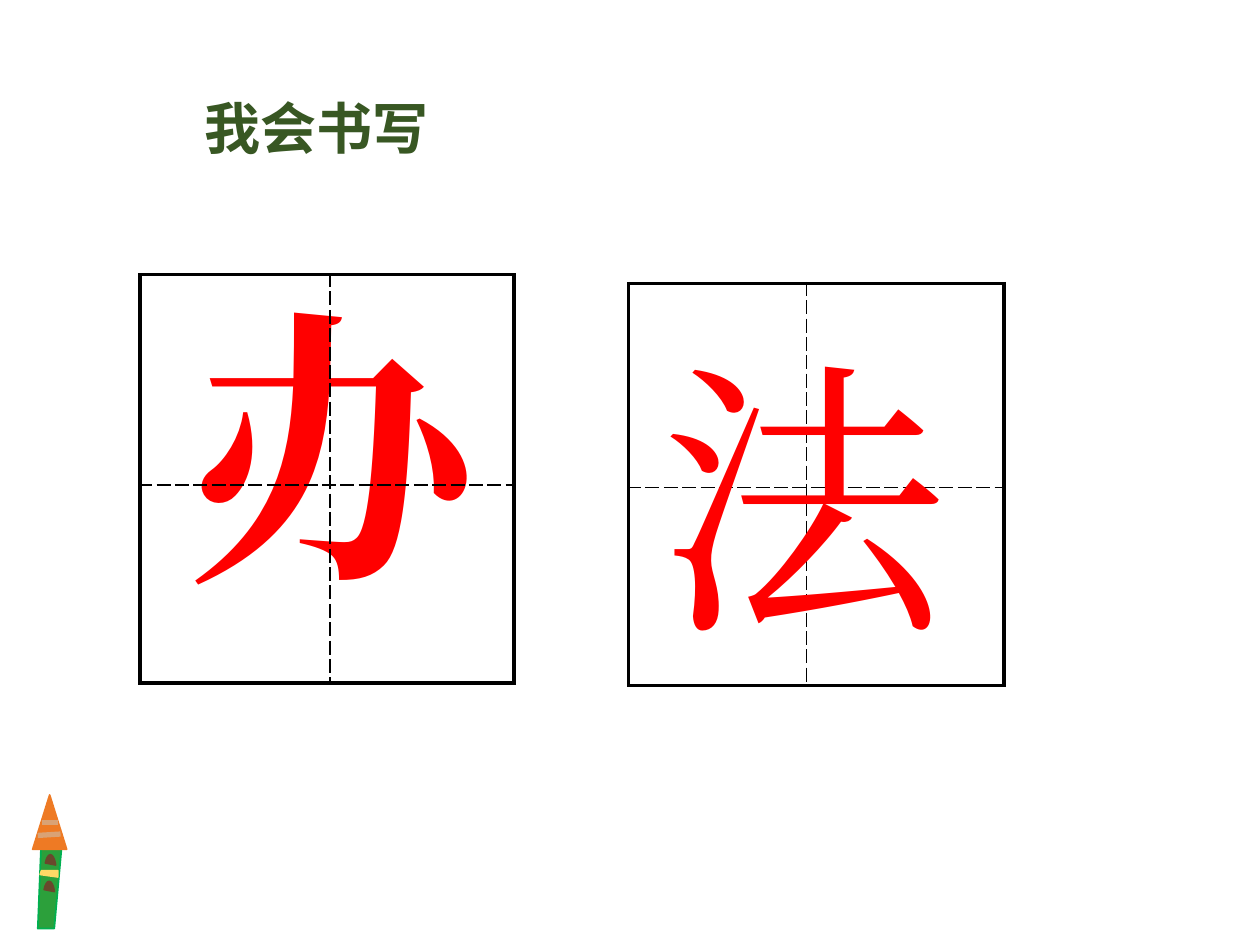
from dataclasses import dataclass

from lxml import etree
from pptx import Presentation
from pptx.dml.color import RGBColor
from pptx.enum.shapes import MSO_CONNECTOR, MSO_SHAPE
from pptx.enum.text import MSO_ANCHOR, MSO_AUTO_SIZE, PP_ALIGN
from pptx.oxml.ns import qn
from pptx.util import Pt

TRIANGLE, CHORD = MSO_SHAPE.ISOSCELES_TRIANGLE, MSO_SHAPE.CHORD
STRAIGHT = MSO_CONNECTOR.STRAIGHT
TOP, LEFT = MSO_ANCHOR.TOP, PP_ALIGN.LEFT
FIT_SHAPE = MSO_AUTO_SIZE.SHAPE_TO_FIT_TEXT
TITLE_ONLY = 5

COLORS = {
    "title": "385723",
    "character": "FF0000",
    "grid": "000000",
    "body": "2CA03B",
    "body edge": "00B050",
    "tip": "EE7A24",
    "spot": "69482C",
    "band": "FFD966",
    "stripe": "D9A275",
}


@dataclass
class Box:
    left: float
    top: float
    width: float
    height: float

    def lengths(self) -> tuple:
        return Pt(self.left), Pt(self.top), Pt(self.width), Pt(self.height)


@dataclass
class TextStyle:
    size: float
    font: str
    color: str
    bold: bool = False


@dataclass
class WritingGrid:
    left: float
    top: float
    columns: tuple
    rows: tuple


@dataclass
class Outline:
    points: tuple
    fill: str
    edge: str


@dataclass
class Preset:
    kind: int
    box: Box
    color: str
    rotation: float = 0
    adjustments: tuple = ()


@dataclass
class Stripe:
    start: tuple
    end: tuple


PENCIL_BODY = Outline(((23.8, 475.9), (35.3, 483.1), (31, 530.6), (21.6, 530.6)),
                      "body", "body edge")
PENCIL_BAND = Outline(((23.8, 497.5), (33.1, 497.5), (33.1, 501.1), (23, 499.7)),
                      "band", "band")
CHORD_ANGLES = (89.452, 132.133)
PENCIL_PARTS = (
    PENCIL_BODY,
    Preset(TRIANGLE, Box(18.7, 454.3, 19.4, 31), "tip"),
    Preset(CHORD, Box(19.4, 494.6, 18.7, 6.5), "spot", 90, CHORD_ANGLES),
    PENCIL_BAND,
    Preset(CHORD, Box(18.7, 509.8, 18.7, 6.5), "spot", 90, CHORD_ANGLES),
    Stripe((23.8, 470.2), (33.1, 470.2)),
    Stripe((21.6, 477.4), (34.6, 476.6)),
)


def rgb(name: str) -> RGBColor:
    return RGBColor.from_string(COLORS[name])


def paint(shape, fill: str, edge: str) -> None:
    shape.shadow.inherit = False
    shape.fill.solid()
    shape.fill.fore_color.rgb = rgb(fill)
    shape.line.color.rgb = rgb(edge)
    shape.line.width = Pt(1)


def draw_outline(shapes, outline: Outline) -> None:
    corners = [(Pt(x), Pt(y)) for x, y in outline.points]
    builder = shapes.build_freeform(*corners[0])
    builder.add_line_segments(corners[1:], close=True)
    paint(builder.convert_to_shape(), outline.fill, outline.edge)


def draw_preset(shapes, preset: Preset) -> None:
    shape = shapes.add_shape(preset.kind, *preset.box.lengths())
    shape.rotation = preset.rotation
    for index, value in enumerate(preset.adjustments):
        shape.adjustments[index] = value
    paint(shape, preset.color, preset.color)


def draw_stripe(shapes, stripe: Stripe) -> None:
    ends = [Pt(value) for value in stripe.start + stripe.end]
    connector = shapes.add_connector(STRAIGHT, *ends)
    connector.line.color.rgb = rgb("stripe")
    connector.line.width = Pt(3)
    properties = connector._element.find(qn("p:spPr"))
    etree.SubElement(properties, qn("a:effectLst"))


def draw_pencil(slide) -> None:
    shapes = slide.shapes.add_group_shape().shapes
    painters = {Outline: draw_outline, Preset: draw_preset, Stripe: draw_stripe}
    for part in PENCIL_PARTS:
        painters[type(part)](shapes, part)


def write(shape, text: str, style: TextStyle, wrap: bool) -> None:
    frame = shape.text_frame
    frame.word_wrap = wrap
    frame.auto_size = FIT_SHAPE
    frame.vertical_anchor = TOP
    paragraph = frame.paragraphs[0]
    paragraph.alignment = LEFT
    run = paragraph.add_run()
    run.text = text
    run.font.size = Pt(style.size)
    run.font.name = style.font
    run.font.bold = style.bold
    run.font.color.rgb = rgb(style.color)
    latin = run.font._element.find(qn("a:latin"))
    latin.addnext(latin.makeelement(qn("a:ea"), {"typeface": style.font}))


def add_character(slide, text: str, box: Box, bold: bool, wrap: bool) -> None:
    shape = slide.shapes.add_textbox(*box.lengths())
    write(shape, text, TextStyle(165, "Times New Roman", "character", bold), wrap)


def set_border(cell, side: str, outer: bool) -> None:
    width = Pt(2.25) if outer else Pt(1)
    line = etree.SubElement(cell._tc.get_or_add_tcPr(), qn(f"a:ln{side}"), w=str(width))
    fill = etree.SubElement(line, qn("a:solidFill"))
    etree.SubElement(fill, qn("a:srgbClr"), val=COLORS["grid"])
    etree.SubElement(line, qn("a:prstDash"), val="solid" if outer else "sysDash")


def add_writing_grid(slide, grid: WritingGrid) -> None:
    """Draw a square with a solid frame and a dashed cross."""
    box = Box(grid.left, grid.top, sum(grid.columns), sum(grid.rows))
    table = slide.shapes.add_table(2, 2, *box.lengths()).table
    table.first_row = table.horz_banding = False
    for index in range(2):
        table.columns[index].width = Pt(grid.columns[index])
        table.rows[index].height = Pt(grid.rows[index])
    for row in range(2):
        for column in range(2):
            cell = table.cell(row, column)
            set_border(cell, "L", column == 0)
            set_border(cell, "R", column == 1)
            set_border(cell, "T", row == 0)
            set_border(cell, "B", row == 1)
            cell.fill.background()


def main() -> None:
    presentation = Presentation()
    presentation.slide_width, presentation.slide_height = Pt(720), Pt(540)
    slide = presentation.slides.add_slide(presentation.slide_layouts[TITLE_ONLY])

    title = slide.shapes.title
    title.left, title.top, title.width, title.height = Box(109.4, 49.7, 144, 46).lengths()
    write(title, "我会书写", TextStyle(32, "Noto Sans CJK SC", "title", True), False)

    draw_pencil(slide)
    add_character(slide, "办", Box(99.4, 150.5, 183.6, 205.2), True, True)
    add_writing_grid(slide, WritingGrid(79.9, 157, (108.7, 105.1), (120.2, 113)))
    add_writing_grid(slide, WritingGrid(359.3, 162, (101.5, 113), (116.6, 113)))
    add_character(slide, "法", Box(369.4, 179.3, 181.4, 207.4), False, False)
    presentation.save("out.pptx")


if __name__ == "__main__":
    main()
